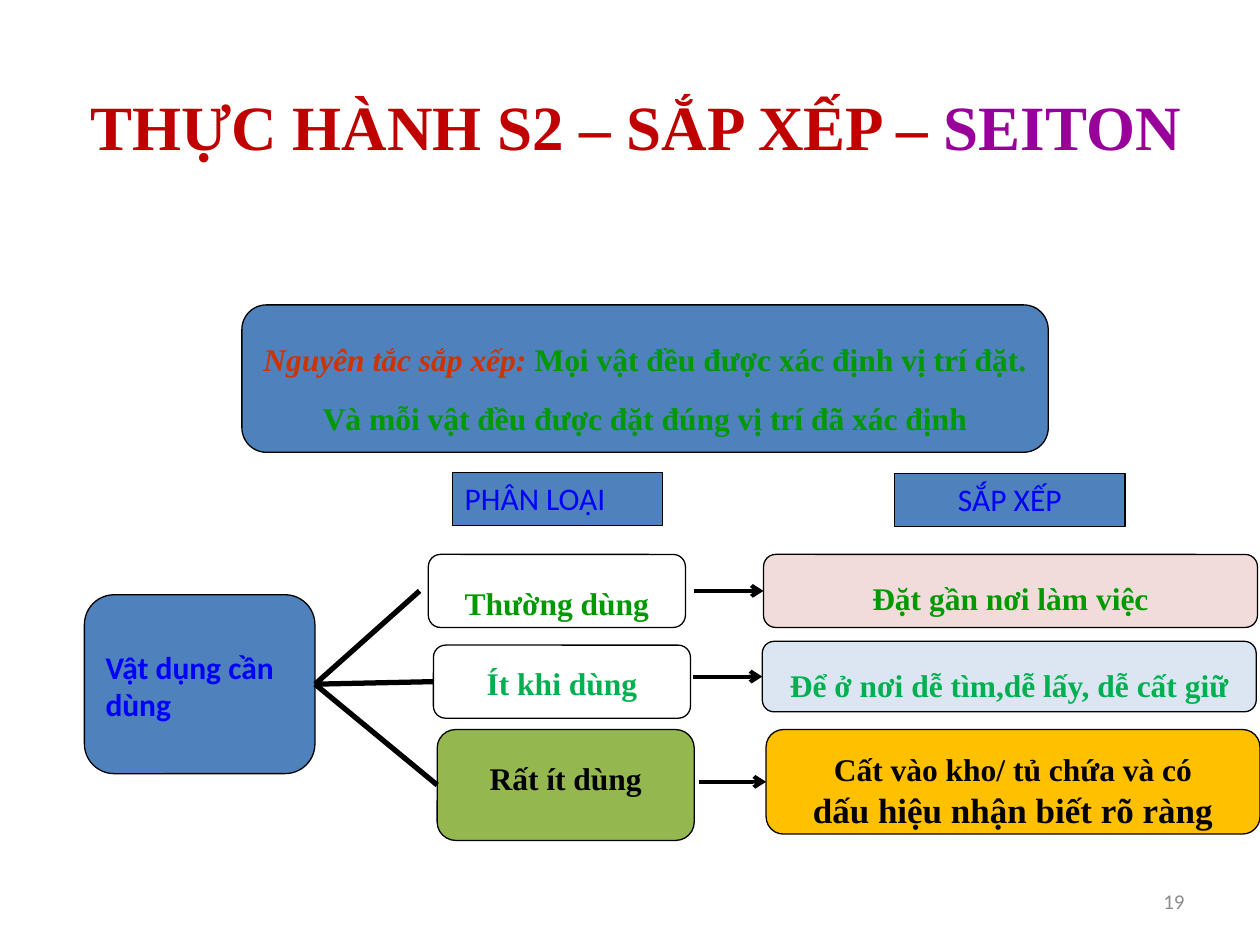
from lxml.etree import SubElement
from pptx import Presentation
from pptx.dml.color import RGBColor
from pptx.enum.shapes import MSO_CONNECTOR, MSO_SHAPE
from pptx.enum.text import MSO_ANCHOR, PP_ALIGN
from pptx.oxml.ns import qn
from pptx.util import Inches, Pt

SERIF, SANS = "Times New Roman", "Calibri"
BLUE, GREEN, BRIGHT_GREEN, INK = "4F81BD", "009900", "00B050", "000000"
LABEL_BLUE = "0000FF"

TITLE = [("THỰC HÀNH S2 – SẮP XẾP – ", "C00000"), ("SEITON", "990099")]
PRINCIPLE = [
    ("Nguyên tắc sắp xếp: ", "CC3300", True),
    ("Mọi vật đều được xác định vị trí đặt. Và mỗi vật đều được đặt đúng vị trí đã xác định", GREEN, False),
]
HEADINGS = [
    ("PHÂN LOẠI", (3.59, 3.75, 1.67, 0.42), PP_ALIGN.LEFT),
    ("SẮP XẾP", (7.1, 3.76, 1.83, 0.42), PP_ALIGN.CENTER),
]
ROWS = [
    {
        "group": ("Thường dùng", (3.4, 4.4, 2.04, 0.58), "FFFFFF", 33),
        "place": ([("Đặt gần nơi làm việc", 18, 30)], (6.06, 4.4, 3.92, 0.58), "F2DCDB"),
        "ink": GREEN, "branch_end": (3.33, 4.69), "arrow_start": 5.51,
    },
    {
        "group": ("Ít khi dùng", (3.44, 5.12, 2.04, 0.58), None, 27),
        "place": ([("Để ở nơi dễ tìm,dễ lấy, dễ cất giữ", 18, 30)], (6.05, 5.09, 3.92, 0.56), "DCE6F2"),
        "ink": BRIGHT_GREEN, "branch_end": None, "arrow_start": 5.5,
    },
    {
        "group": ("Rất ít dùng", (3.47, 5.79, 2.04, 0.88), "95B74F", 32),
        "place": ([("Cất vào kho/ tủ chứa và có", 18, 27), ("dấu hiệu nhận biết rõ ràng", 20, 24)],
                  (6.08, 5.79, 3.92, 0.83), "FFC000"),
        "ink": INK, "branch_end": None, "arrow_start": 5.55,
    },
]


def color(value):
    return RGBColor.from_string(value)


def add_run(paragraph, text, ink, size=18, font=SERIF, bold=True, italic=False):
    run = paragraph.add_run()
    run.text = text
    run.font.name, run.font.size = font, Pt(size)
    run.font.bold, run.font.italic = bold, italic
    run.font.color.rgb = color(ink)


def add_label(slide, bounds, align):
    label = slide.shapes.add_textbox(*map(Inches, bounds))
    label.text_frame.word_wrap = True
    label.text_frame.vertical_anchor = MSO_ANCHOR.MIDDLE
    paragraph = label.text_frame.paragraphs[0]
    paragraph.alignment = align
    return paragraph


def add_box(slide, bounds, fill, kind=MSO_SHAPE.ROUNDED_RECTANGLE):
    box = slide.shapes.add_shape(kind, *map(Inches, bounds))
    box.shadow.inherit = False
    if fill:
        box.fill.solid()
        box.fill.fore_color.rgb = color(fill)
    else:
        box.fill.background()
    box.line.color.rgb = color(INK)
    box.line.width = Pt(0.75)
    box.text_frame.word_wrap = True
    box.text_frame.vertical_anchor = MSO_ANCHOR.TOP
    return box


def add_paragraph(box, index=0, align=PP_ALIGN.CENTER, spacing=None):
    frame = box.text_frame
    paragraph = frame.add_paragraph() if index else frame.paragraphs[0]
    paragraph.alignment = align
    if spacing:
        paragraph.line_spacing = Pt(spacing)
    return paragraph


def add_line(slide, start, end, width, arrow=False):
    line = slide.shapes.add_connector(MSO_CONNECTOR.STRAIGHT, *map(Inches, (*start, *end)))
    line.line.color.rgb = color(INK)
    line.line.width = Pt(width)
    if arrow:
        SubElement(line.line._get_or_add_ln(), qn("a:tailEnd"), type="arrow")
    SubElement(line._element.spPr, qn("a:effectLst"))
    return line


def left_middle(bounds):
    left, top, _, height = bounds
    return left, top + height / 2


def main():
    deck = Presentation()
    deck.slide_width, deck.slide_height = Inches(10), Inches(7.5)
    slide = deck.slides.add_slide(deck.slide_layouts[6])

    title = add_label(slide, (0.17, 0.33, 9.75, 1.33), PP_ALIGN.CENTER)
    for text, ink in TITLE:
        add_run(title, text, ink, 36)
    number = add_label(slide, (7.17, 6.95, 2.33, 0.4), PP_ALIGN.RIGHT)
    add_run(number, "19", "8C8C8C", 12, SANS, False)

    principle = add_paragraph(add_box(slide, (1.92, 2.42, 6.4, 1.17), BLUE), spacing=34)
    for text, ink, italic in PRINCIPLE:
        add_run(principle, text, ink, italic=italic)

    items = add_box(slide, (0.67, 4.72, 1.83, 1.42), BLUE)
    items.text_frame.margin_top = Inches(0.35)
    add_run(add_paragraph(items, align=PP_ALIGN.LEFT), "Vật dụng cần dùng", LABEL_BLUE, font=SANS)
    fork = (2.5, 5.43)

    for text, bounds, align in HEADINGS:
        heading = add_box(slide, bounds, BLUE, MSO_SHAPE.RECTANGLE)
        add_run(add_paragraph(heading, align=align), text, LABEL_BLUE, font=SANS, bold=False)

    for row in ROWS:
        text, group_bounds, fill, spacing = row["group"]
        group = add_box(slide, group_bounds, fill)
        add_run(add_paragraph(group, spacing=spacing), text, row["ink"])

        lines, place_bounds, fill = row["place"]
        place = add_box(slide, place_bounds, fill)
        for index, (text, size, spacing) in enumerate(lines):
            add_run(add_paragraph(place, index, spacing=spacing), text, row["ink"], size)

        branch = add_line(slide, fork, row["branch_end"] or left_middle(group_bounds), 3)
        branch.begin_connect(items, 3)
        if not row["branch_end"]:
            branch.end_connect(group, 1)

        tip = left_middle(place_bounds)
        arrow = add_line(slide, (row["arrow_start"], tip[1]), tip, 2.25, arrow=True)
        arrow.end_connect(place, 1)

    deck.save("out.pptx")


if __name__ == "__main__":
    main()
